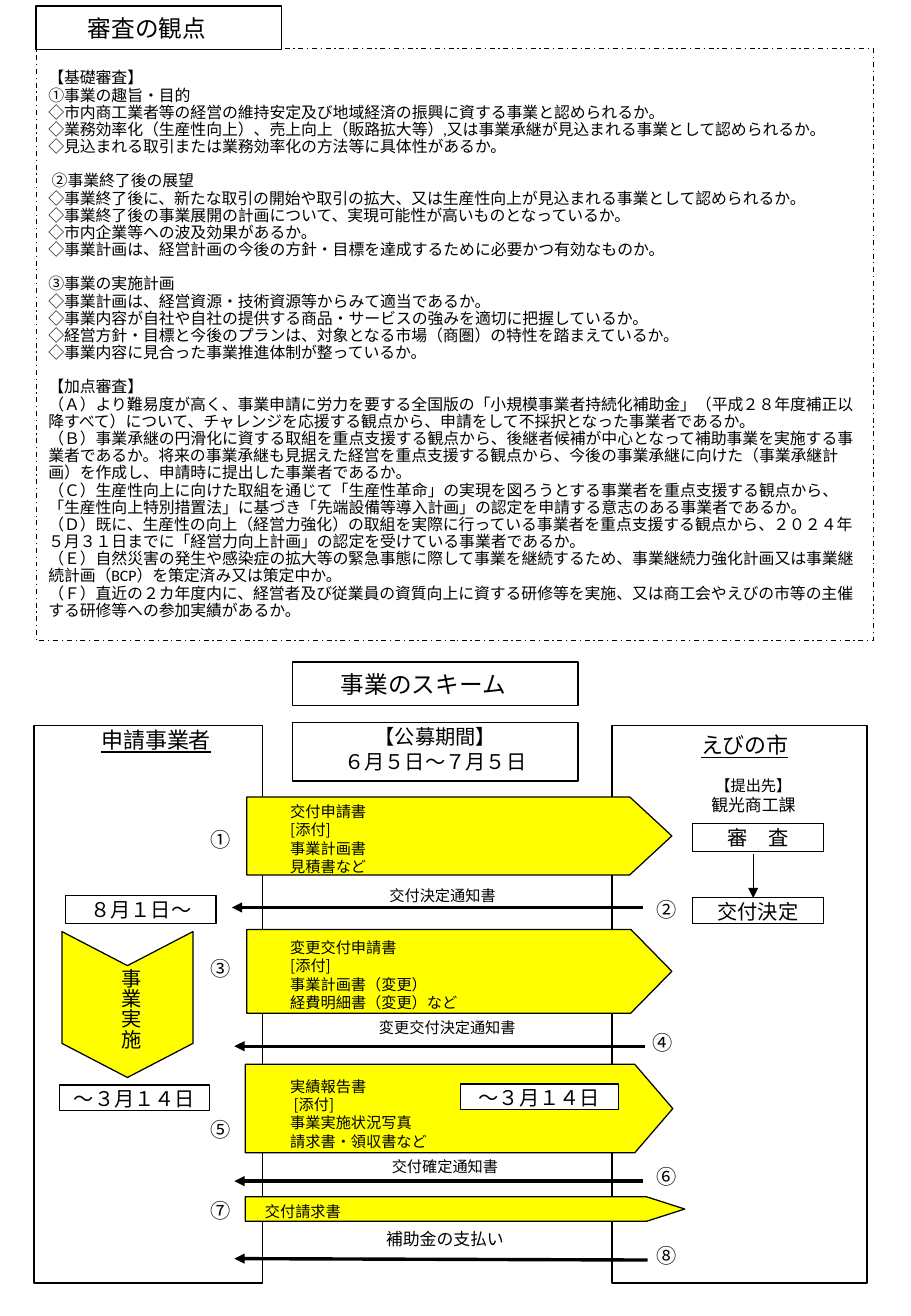
from lxml import etree
from pptx import Presentation
from pptx.dml.color import RGBColor
from pptx.enum.dml import MSO_LINE as Dash
from pptx.enum.shapes import MSO_CONNECTOR as Connector, MSO_SHAPE as Shape
from pptx.enum.text import MSO_ANCHOR as Anchor, PP_ALIGN as Align
from pptx.oxml.ns import qn
from pptx.util import Cm, Pt

COLOURS = {"ink": "000000", "paper": "FFFFFF", "arrow": "FFFF00"}
JAPANESE = "Noto Sans CJK JP"
LEADING = 1.21

deck = Presentation()
deck.slide_width, deck.slide_height = Cm(19.05), Cm(27.51)
page = deck.slides.add_slide(deck.slide_layouts[6])


def draw(kind, place, fill=None, width=0.75):
    lengths = [Cm(value) for value in place]
    if kind is None:
        return page.shapes.add_textbox(*lengths)
    box = page.shapes.add_shape(kind, *lengths)
    box.shadow.inherit = False
    if fill:
        box.fill.solid()
        box.fill.fore_color.rgb = RGBColor.from_string(COLOURS[fill])
    else:
        box.fill.background()
    box.line.color.rgb = RGBColor.from_string(COLOURS["ink"])
    box.line.width = Pt(width)
    return box


def write(box, lines, size, align=Align.CENTER, font=JAPANESE, anchor=Anchor.TOP, tight=1):
    frame = box.text_frame
    frame.word_wrap = True
    frame.vertical_anchor = anchor
    if anchor == Anchor.TOP:
        frame.margin_left = frame.margin_right = Cm(0.18)
        frame.margin_top = frame.margin_bottom = Cm(0.03)
    for index, line in enumerate(lines):
        para = frame.paragraphs[0] if index == 0 else frame.add_paragraph()
        for part, words in enumerate(line.split("|")):
            span = para.add_run()
            span.text = words
            if part % 2:
                span.font.name = "Arial"
        para.alignment = align
        para.line_spacing = Pt(round(size * LEADING * tight, 1))
        para.font.size = Pt(size)
        para.font.name = font
        para.font.color.rgb = RGBColor.from_string(COLOURS["ink"])
        defaults = para._p.pPr.find(qn("a:defRPr"))
        etree.SubElement(defaults, qn("a:ea")).set("typeface", JAPANESE)
    return frame.paragraphs


sections = [
    ["【基礎審査】",
     "①事業の趣旨・目的",
     "◇市内商工業者等の経営の維持安定及び地域経済の振興に資する事業と認められるか。",
     "◇業務効率化（生産性向上）、売上向上（販路拡大等）,又は事業承継が見込まれる事業として認められるか。",
     "◇見込まれる取引または業務効率化の方法等に具体性があるか。"],
    [" ②事業終了後の展望",
     "◇事業終了後に、新たな取引の開始や取引の拡大、又は生産性向上が見込まれる事業として認められるか。",
     "◇事業終了後の事業展開の計画について、実現可能性が高いものとなっているか。",
     "◇市内企業等への波及効果があるか。",
     "◇事業計画は、経営計画の今後の方針・目標を達成するために必要かつ有効なものか。"],
    ["③事業の実施計画",
     "◇事業計画は、経営資源・技術資源等からみて適当であるか。",
     "◇事業内容が自社や自社の提供する商品・サービスの強みを適切に把握しているか。",
     "◇経営方針・目標と今後のプランは、対象となる市場（商圏）の特性を踏まえているか。",
     "◇事業内容に見合った事業推進体制が整っているか。"],
    ["【加点審査】",
     "（Ａ）より難易度が高く、事業申請に労力を要する全国版の「小規模事業者持続化補助金」（平成|２８|年度補正以降すべて）について、チャレンジを応援する観点から、申請をして不採択となった事業者であるか。",
     "（Ｂ）事業承継の円滑化に資する取組を重点支援する観点から、後継者候補が中心となって補助事業を実施する事業者であるか。将来の事業承継も見据えた経営を重点支援する観点から、今後の事業承継に向けた（事業承継計画）を作成し、申請時に提出した事業者であるか。",
     "（Ｃ）生産性向上に向けた取組を通じて「生産性革命」の実現を図ろうとする事業者を重点支援する観点から、「生産性向上特別措置法」に基づき「先端設備等導入計画」の認定を申請する意志のある事業者であるか。",
     "（Ｄ）既に、生産性の向上（経営力強化）の取組を実際に行っている事業者を重点支援する観点から、|２０２４|年５月３１日までに「経営力向上計画」の認定を受けている事業者であるか。",
     "（Ｅ）自然災害の発生や感染症の拡大等の緊急事態に際して事業を継続するため、事業継続力強化計画又は事業継続計画（BCP）を策定済み又は策定中か。",
     "（Ｆ）直近の２カ年度内に、経営者及び従業員の資質向上に資する研修等を実施、又は商工会やえびの市等の主催する研修等への参加実績があるか。"],
]
criteria = draw(Shape.RECTANGLE, (0.76, 1.02, 17.5, 12.37))
criteria.line.dash_style = Dash.DASH_DOT
criteria_lines = [line for section in sections for line in section]
paragraphs = write(criteria, criteria_lines, 9.4, Align.LEFT, "Calibri", Anchor.MIDDLE, 0.9)
for section in sections[1:]:
    paragraphs[criteria_lines.index(section[0])].space_before = Pt(10.2)

for words, place in [("審査の観点　", (0.76, 0.13, 5.13, 0.91)),
                     ("事業のスキーム　", (6.12, 13.84, 5.97, 0.91))]:
    write(draw(Shape.RECTANGLE, place, "paper", 1), [words], 14, font="Calibri", anchor=Anchor.MIDDLE)

for name, left, width, title_place in [
        ("申請事業者", 0.71, 4.78, (0.84, 15.16, 4.85, 0.74)),
        ("えびの市", 12.8, 5.33, (13.16, 15.27, 4.83, 0.74))]:
    draw(Shape.RECTANGLE, (left, 15.16, width, 11.66))
    write(draw(None, title_place), [name], 13)[0].font.underline = True

submissions = [
    ((5.16, 16.66, 8.89, 1.63), 0.54, (5.89, 16.74),
     ["交付申請書", "[添付]", "事業計画書", "見積書など"]),
    ((5.16, 19.43, 8.89, 1.75), 0.49, (5.89, 19.58),
     ["変更交付申請書", "[添付]", "事業計画書（変更）", "経費明細書（変更）など"]),
    ((5.13, 22.25, 8.94, 1.85), 0.43, (5.89, 22.48),
     ["実績報告書", " [添付]", "事業実施状況写真", "請求書・領収書など"]),
    ((5.13, 25.02, 9.19, 0.51), 1.56, (5.36, 25.1), ["交付請求書"]),
]
for place, point, corner, documents in submissions:
    arrow = draw(Shape.RIGHT_ARROW, place, "arrow")
    arrow.adjustments[0], arrow.adjustments[1] = 1, point
    write(draw(None, (*corner, 7.82, 0.4 * len(documents))), documents, 9, Align.LEFT)

work = draw(Shape.NOTCHED_RIGHT_ARROW, (1.14, 19.63, 3.05, 2.74), "arrow")
work.adjustments[0], work.adjustments[1] = 1, 0.26
work.rotation = 90
work_label = draw(None, (1.68, 20.22, 1.5, 2.11))
write(work_label, ["事業実施"], 12, Align.JUSTIFY)
work_label.text_frame._txBody.bodyPr.set("vert", "eaVert")

for words, left, top, size in [("交付決定通知書", 5.89, 18.49, 9), ("変更交付決定通知書", 5.99, 21.26, 9),
                               ("交付確定通知書", 5.94, 24.16, 9), ("補助金の支払い", 5.94, 25.65, 10)]:
    write(draw(None, (left, top, 6.73, 0.38)), [words], size)

for start_x, start_y, end_x, end_y, width in [
        (13.44, 18.97, 4.85, 18.97, 2), (13.49, 21.87, 4.9, 21.87, 2),
        (13.44, 24.69, 4.9, 24.69, 2), (13.54, 26.34, 4.9, 26.31, 2),
        (15.75, 17.86, 15.75, 18.77, 0.75)]:
    reply = page.shapes.add_connector(Connector.STRAIGHT, Cm(start_x), Cm(start_y), Cm(end_x), Cm(end_y))
    reply.line.color.rgb = RGBColor.from_string(COLOURS["ink"])
    reply.line.width = Pt(width)
    etree.SubElement(reply.line._get_or_add_ln(), qn("a:tailEnd")).set("type", "triangle")
    etree.SubElement(reply._element.spPr, qn("a:effectLst"))

for number, left, top in [("①", 4.22, 17.27), ("②", 13.54, 18.72), ("③", 4.22, 19.96), ("④", 13.46, 21.51),
                          ("⑤", 4.22, 23.32), ("⑥", 13.54, 24.31), ("⑦", 4.22, 25.02), ("⑧", 13.54, 25.96)]:
    write(draw(None, (left, top, 1.04, 0.53)), [number], 12, Align.LEFT)

for lines, place in [
        (["【公募期間】", "６月５日～７月５日"], (6.12, 15.11, 5.97, 1.22)),
        (["審　査"], (14.48, 17.22, 2.74, 0.58)),
        (["交付決定"], (14.48, 18.77, 2.74, 0.53)),
        (["８月１日～"], (1.37, 18.72, 3.15, 0.58)),
        (["～３月１４日"], (1.24, 22.68, 3.15, 0.53)),
        (["～３月１４日"], (9.63, 22.66, 3.3, 0.53))]:
    write(draw(Shape.RECTANGLE, place, "paper"), lines, 12)

office = write(draw(None, (13.34, 16.2, 4.83, 0.84)), ["【提出先】", "観光商工課"], 9)[1]
office.font.size = Pt(10)
office.line_spacing = Pt(12.1)

deck.save("out.pptx")
